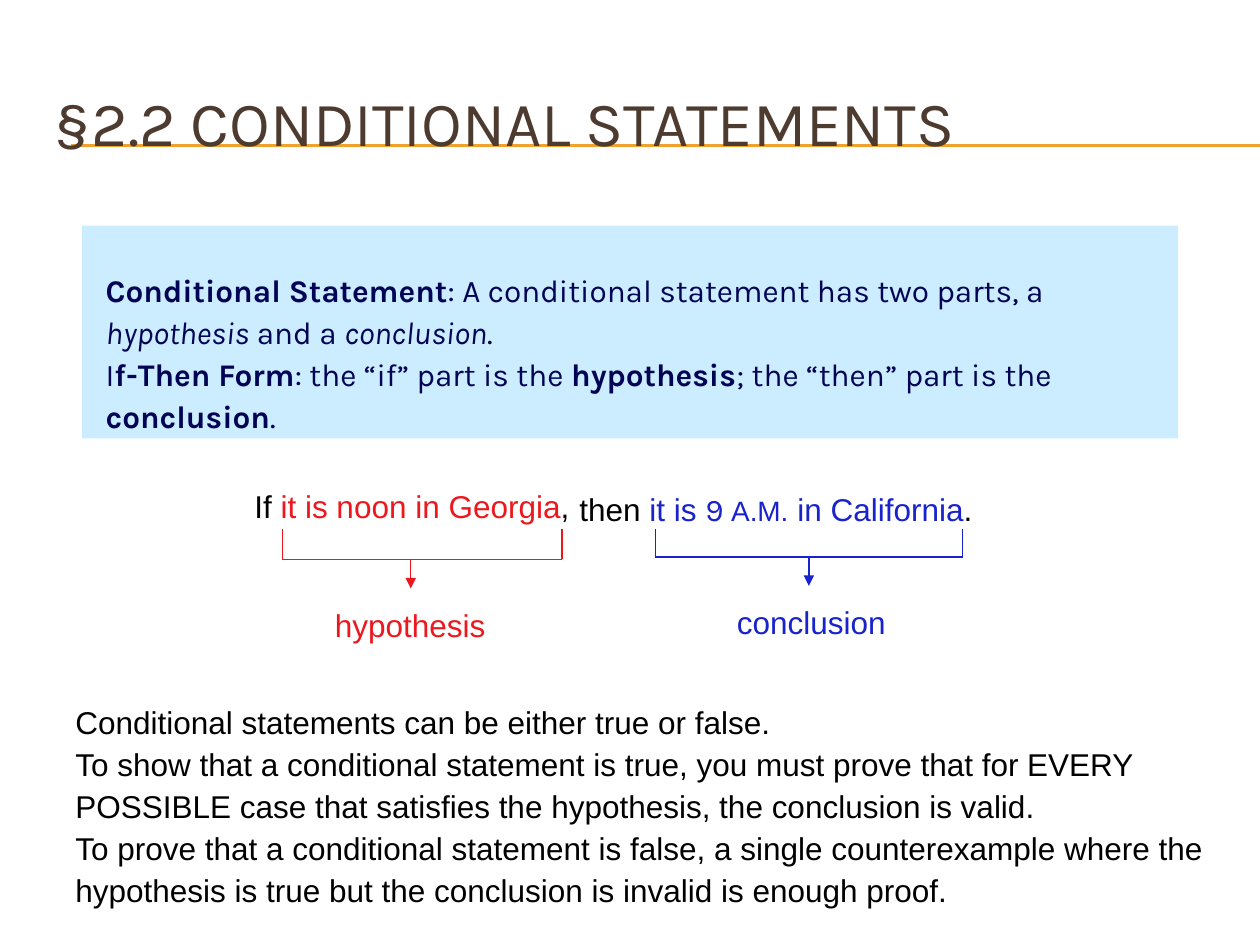
from lxml.etree import SubElement
from pptx import Presentation
from pptx.dml.color import RGBColor
from pptx.enum.shapes import MSO_CONNECTOR as CONN, MSO_SHAPE as SHAPE
from pptx.enum.text import MSO_ANCHOR as ANCHOR
from pptx.oxml.ns import qn
from pptx.util import Inches, Pt

BROWN = RGBColor(0x4E, 0x3B, 0x30)
ORANGE = RGBColor(0xF0, 0xA2, 0x2E)
PALE_BLUE = RGBColor(0xCC, 0xEC, 0xFF)
NAVY = RGBColor(0x01, 0x04, 0x55)
RED = RGBColor(0xED, 0x18, 0x1E)
BLUE = RGBColor(0x18, 0x22, 0xCD)
BLACK = RGBColor(0, 0, 0)

# The slide is a grid of 100 columns by 75 rows
CELL = Inches(0.1)
COLS, ROWS = 100, 75

prs = Presentation()
prs.slide_width, prs.slide_height = COLS * CELL, ROWS * CELL
s = prs.slides.add_slide(prs.slide_layouts[6])


def add_text(box, paragraphs, size=18, font="Arial", color=BLACK,
             spacing=None, anchor=ANCHOR.TOP):
    """Each paragraph is a list of (text, overrides) runs; "\\n" breaks a line."""
    tb = s.shapes.add_textbox(*(int(n * CELL) for n in box))
    tf = tb.text_frame
    tf.word_wrap = True
    tf.vertical_anchor = anchor
    for i, runs in enumerate(paragraphs):
        p = tf.add_paragraph() if i else tf.paragraphs[0]
        p.line_spacing = spacing
        for text, style in runs:
            if text == "\n":
                p.add_line_break()
                continue
            r = p.add_run()
            r.text = text
            r.font.size = Pt(style.get("size", size))
            r.font.name = style.get("font", font)
            r.font.color.rgb = style.get("color", color)
            r.font.bold = style.get("bold", False)
            r.font.italic = style.get("italic", False)


def add_line(x1, y1, x2, y2, color, arrow=False):
    ends = (int(n * CELL) for n in (x1, y1, x2, y2))
    line = s.shapes.add_connector(CONN.STRAIGHT, *ends)
    line.line.color.rgb = color
    line.line.width = Pt(0.75)
    if arrow:
        SubElement(line.line._get_or_add_ln(), qn("a:tailEnd"), type="triangle")
    SubElement(line._element.spPr, qn("a:effectLst"))


# Title with its double rule
for y in (11.5, 11.6):
    add_line(5.6, y, COLS, y, ORANGE)
add_text((3.3, 5, 95, 9.2), [[("§2.2 CONDITIONAL STATEMENTS", {})]],
         size=36, font="Karla", color=BROWN, anchor=ANCHOR.MIDDLE)

# Definition panel
panel = s.shapes.add_shape(SHAPE.RECTANGLE, *(int(n * CELL) for n in (6.5, 17.9, 87, 16.9)))
panel.shadow.inherit = False
panel.fill.solid()
panel.fill.fore_color.rgb = PALE_BLUE
panel.line.fill.background()

bold, italic = {"bold": True}, {"italic": True}
add_text((7.4, 20.7, 86.8, 11), [[
    ("Conditional Statement", bold),
    (": A conditional statement has two parts, a ", {}),
    ("hypothesis", italic), (" and a ", {}), ("conclusion", italic), (". ", {}),
    ("\n", {}),
    ("I", {}), ("f-Then Form", bold), (": the “if” part is the ", {}),
    ("hypothesis", bold), ("; the “then” part is the ", {}),
    ("conclusion", bold), (".", {}),
]], font="Karla", color=NAVY, spacing=Pt(24))

# Example sentence
red, blue = {"color": RED}, {"color": BLUE}
add_text((19.2, 38.2, 29.5, 4),
         [[("If ", {}), ("it is noon in Georgia", red), (",", {})]])
add_text((45, 38.4, 34.5, 4), [[
    ("then ", {}), ("it is ", blue), ("9 ", {**blue, "font": "Karla"}),
    ("A.M.", {**blue, "size": 16}), (" in California", blue), (".", {}),
]])

# Brackets pointing from each clause to its name
BRACKET_TOP, STEM = 42, 2.3
for name, color, left, right, tip, base, label_x in (
    ("hypothesis", RED, 22.4, 44.6, 32.6, 44.4, 25.6),
    ("conclusion", BLUE, 52, 76.4, 64.2, 44.2, 57.5),
):
    for x in (left, right):
        add_line(x, BRACKET_TOP, x, base, color)
    add_line(left, base, right, base, color)
    add_line(tip, base, tip, base + STEM, color, arrow=True)
    add_text((label_x, base + 3.2, 16.5, 4), [[(name, {})]], color=color)

# Truth of a conditional statement
notes = (
    "Conditional statements can be either true or false.",
    "To show that a conditional statement is true, you must prove that for EVERY "
    "POSSIBLE case that satisfies the hypothesis, the conclusion is valid.",
    "To prove that a conditional statement is false, a single counterexample where "
    "the hypothesis is true but the conclusion is invalid is enough proof.",
)
add_text((5, 55, 91.9, 17.7), [[(note, {})] for note in notes], spacing=Pt(24))

prs.save("out.pptx")
